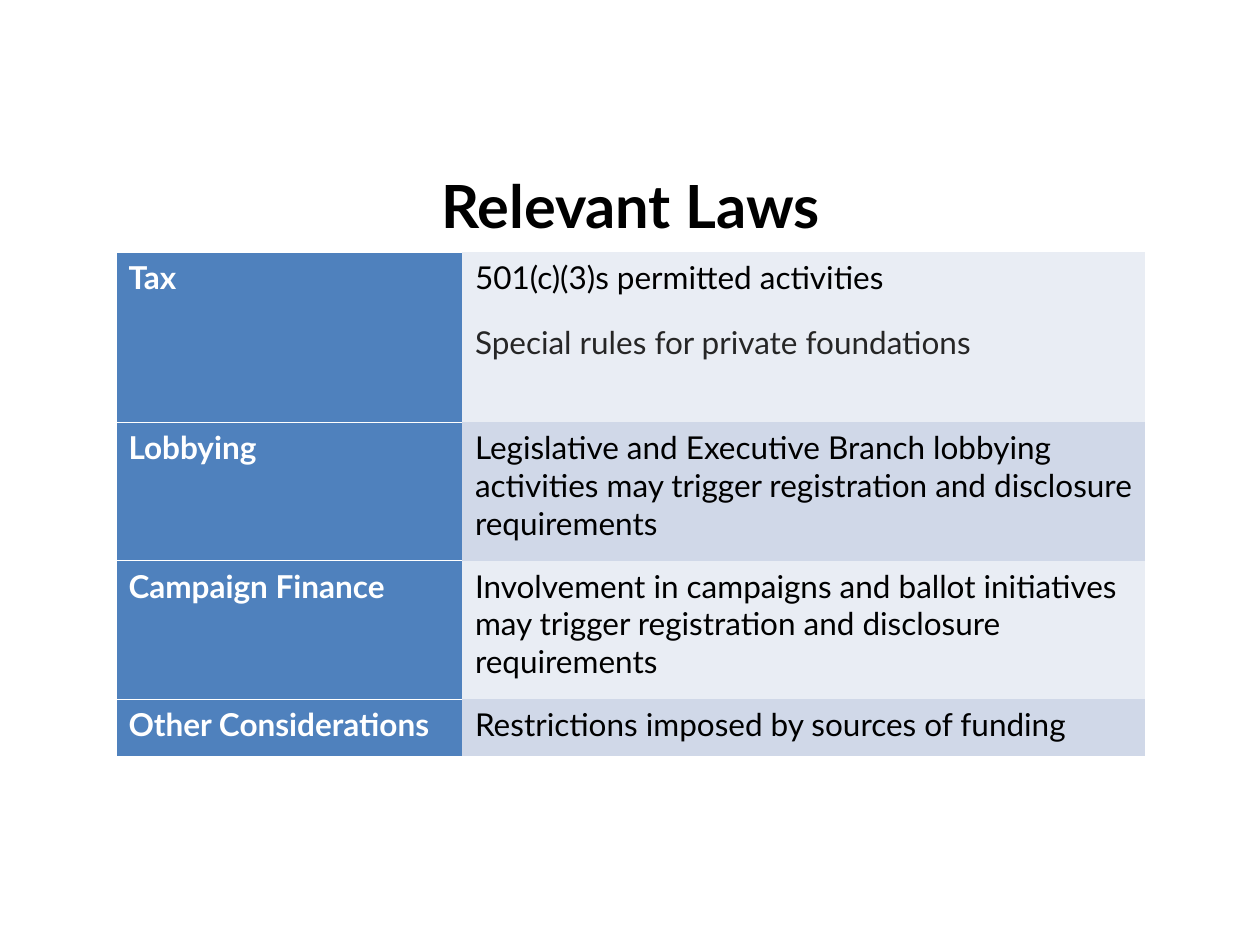
from pptx import Presentation
from pptx.dml.color import RGBColor
from pptx.enum.text import MSO_ANCHOR, PP_ALIGN
from pptx.oxml import parse_xml
from pptx.oxml.ns import nsdecls
from pptx.util import Inches, Pt

CENTER = PP_ALIGN.CENTER
MIDDLE = MSO_ANCHOR.MIDDLE
BLACK = RGBColor(0x00, 0x00, 0x00)
DARK = RGBColor(0x26, 0x26, 0x26)
WHITE = RGBColor(0xFF, 0xFF, 0xFF)
BLUE = RGBColor(0x4F, 0x81, 0xBD)
BANDS = (RGBColor(0xE9, 0xED, 0xF4), RGBColor(0xD0, 0xD8, 0xE8))
PLAIN_TABLE = "{2D5ABB26-0587-4C30-8999-92F81FD0307C}"

LEFT, WIDTH = 0.92, 8.17
COLUMNS = (2.75, 5.42)
LAWS = [
    (1.35, "Tax", [("501(c)(3)s permitted activities", BLACK),
                   ("Special rules for private foundations", DARK)]),
    (1.1, "Lobbying", [("Legislative and Executive Branch lobbying activities may "
                        "trigger registration and disclosure requirements", BLACK)]),
    (1.1, "Campaign Finance", [("Involvement in campaigns and ballot initiatives may "
                                "trigger registration and disclosure requirements", BLACK)]),
    (0.45, "Other Considerations", [("Restrictions imposed by sources of funding", BLACK)]),
]


class SlideBuilder:
    """Holds the text style and the current slide."""

    def __init__(self, s, font="Lato", size=18):
        self.s, self.font, self.size = s, font, size

    def format(self, p, color, bold=False, size=None):
        p.font.name = self.font
        p.font.size = Pt(size or self.size)
        p.font.bold = bold
        p.font.color.rgb = color

    def title(self, text, x, y, w, h):
        sp = self.s.shapes.title
        sp.left, sp.top, sp.width, sp.height = map(Inches, (x, y, w, h))
        tf = sp.text_frame
        tf.text = text
        tf.vertical_anchor = MIDDLE
        p = tf.paragraphs[0]
        p.alignment = CENTER
        self.format(p, BLACK, bold=True, size=34)

    def cell(self, cell, lines, fill, bold=False, borders=()):
        tf = cell.text_frame
        for i, (text, color) in enumerate(lines):
            p = tf.add_paragraph() if i else tf.paragraphs[0]
            p.text = text
            if i:
                p.space_before = Pt(15.6)
            self.format(p, color, bold)
        tcPr = cell._tc.get_or_add_tcPr()
        for side in borders:
            tcPr.append(parse_xml(
                f'<a:ln{side} {nsdecls("a")} w="{Pt(0.5)}"><a:solidFill>'
                f'<a:srgbClr val="{WHITE}"/></a:solidFill></a:ln{side}>'))
        cell.fill.solid()
        cell.fill.fore_color.rgb = fill

    def table(self, rows, x, y, widths):
        height = sum(row[0] for row in rows)
        frame = self.s.shapes.add_table(len(rows), len(widths), Inches(x), Inches(y),
                                        Inches(sum(widths)), Inches(height))
        table = frame.table
        table._tbl.tblPr.find("{*}tableStyleId").text = PLAIN_TABLE
        table.first_row = table.horz_banding = False
        for column, width in zip(table.columns, widths):
            column.width = Inches(width)
        for i, (row_height, label, lines) in enumerate(rows):
            table.rows[i].height = Inches(row_height)
            self.cell(table.cell(i, 0), [(label, WHITE)], BLUE, bold=True, borders="LTB")
            self.cell(table.cell(i, 1), lines, BANDS[i % 2])


def main():
    prs = Presentation()
    prs.slide_width, prs.slide_height = Inches(10), Inches(7.5)
    builder = SlideBuilder(prs.slides.add_slide(prs.slide_layouts[5]))
    builder.title("Relevant Laws", LEFT, 1.25, WIDTH, 0.75)
    builder.table(LAWS, LEFT, 2, COLUMNS)
    prs.save("out.pptx")


if __name__ == "__main__":
    main()
